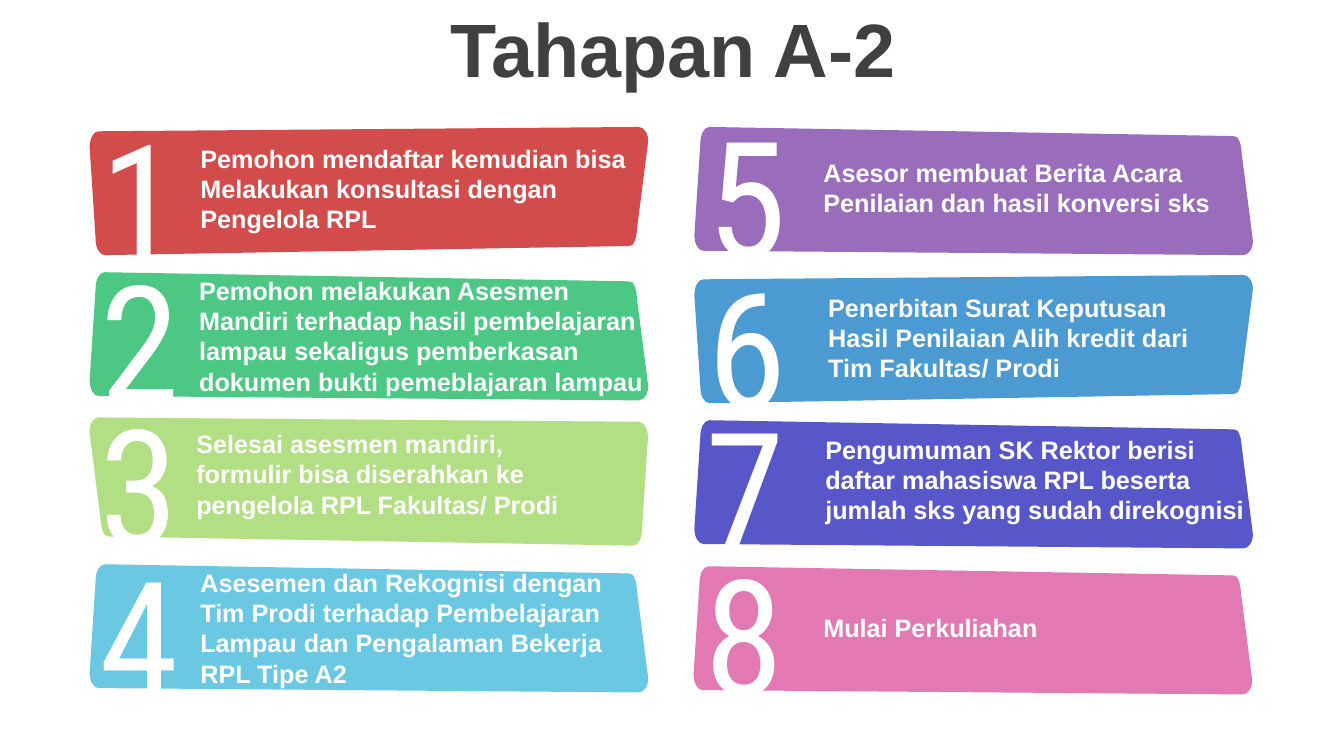
from dataclasses import dataclass

from lxml import etree
from pptx import Presentation
from pptx.dml.color import RGBColor
from pptx.enum.text import MSO_ANCHOR, MSO_AUTO_SIZE, PP_ALIGN
from pptx.oxml.ns import qn
from pptx.util import Cm, Pt

CENTER = PP_ALIGN.CENTER
TOP, MIDDLE = MSO_ANCHOR.TOP, MSO_ANCHOR.MIDDLE
FIT_SHAPE, NO_FIT = MSO_AUTO_SIZE.SHAPE_TO_FIT_TEXT, MSO_AUTO_SIZE.NONE

WHITE = RGBColor(0xFF, 0xFF, 0xFF)
GREY = RGBColor(0x40, 0x40, 0x40)
RED = RGBColor(0xC0, 0x00, 0x00)
GREEN = RGBColor(0x00, 0xB0, 0x50)
LIME = RGBColor(0x92, 0xD0, 0x50)
CYAN = RGBColor(0x2C, 0xB2, 0xD7)
PURPLE = RGBColor(0x70, 0x30, 0xA0)
BLUE = RGBColor(0x00, 0x70, 0xC0)
INDIGO = RGBColor(0x10, 0x10, 0xB3)
PINK = RGBColor(0xD7, 0x41, 0x92)

TITLE_FONT = {"name": "Arial", "size": Pt(54), "bold": True}
STEP_FONT = {"name": "Arial", "size": Pt(18), "bold": True}
DIGIT_FONT = {"name": "Roboto Condensed", "size": Pt(115), "bold": False}

# All lengths below are in centimetres.
LEFT_COLUMN, RIGHT_COLUMN = 2.26, 17.5
BAND_WIDTH, BAND_HEIGHT = 14.07, 3.23
DIGIT_WIDTH, DIGIT_HEIGHT = 2.51, 5.18
LINE_HEIGHT, TEXT_PADDING = 0.77, 0.25
OPACITY = 70

# Each rounded corner is a cubic curve: start, two controls, end.
BAND_CORNERS = (
    ((0.38, 0), (0.25, 0), (0.15, 0.18), (0.15, 0.41)),
    ((0, 2.72), (0, 2.95), (0.1, 3.12), (0.23, 3.12)),
    ((13.84, 3.23), (13.97, 3.23), (14.1, 3.05), (14.07, 2.82)),
    ((13.79, 0.64), (13.79, 0.48), (13.72, 0.2), (13.59, 0.23)),
)


@dataclass
class Step:
    """One band; digit and text offsets are measured from its top left."""
    number: str
    left: float
    top: float
    color: RGBColor
    flip_x: bool
    flip_y: bool
    digit: tuple
    text_box: tuple  # left, top, width, number of lines
    text: str


STEPS = (
    Step("1", LEFT_COLUMN, 3.2, RED, False, True, (0.03, -0.81), (2.54, 0.28, 11.33, 3),
         "Pemohon mendaftar kemudian bisa Melakukan konsultasi dengan Pengelola RPL"),
    Step("2", LEFT_COLUMN, 6.86, GREEN, False, False, (0.03, -0.92), (2.51, -0.05, 11.94, 4),
         "Pemohon melakukan Asesmen Mandiri terhadap hasil pembelajaran lampau "
         "sekaligus pemberkasan dokumen bukti pemeblajaran lampau"),
    Step("3", LEFT_COLUMN, 10.52, LIME, True, True, (0, -0.95), (2.44, 0.15, 10.54, 3),
         "Selesai asesmen mandiri, formulir bisa diserahkan ke pengelola RPL Fakultas/ Prodi"),
    Step("4", LEFT_COLUMN, 14.22, CYAN, False, False, (0, -0.83), (2.54, -0.05, 11.89, 4),
         "Asesemen dan Rekognisi dengan Tim Prodi terhadap Pembelajaran Lampau "
         "dan Pengalaman Bekerja RPL Tipe A2"),
    Step("5", RIGHT_COLUMN, 3.2, PURPLE, False, False, (0.08, -0.89), (3, 0.64, 11.1, 2),
         "Asesor membuat Berita Acara Penilaian dan hasil konversi sks"),
    Step("6", RIGHT_COLUMN, 6.93, BLUE, False, True, (0.08, -0.83), (3.12, 0.3, 10.64, 3),
         "Penerbitan Surat Keputusan Hasil Penilaian Alih kredit dari Tim Fakultas/ Prodi"),
    Step("7", RIGHT_COLUMN, 10.59, INDIGO, False, False, (0.03, -0.94), (3.05, 0.23, 11.61, 3),
         "Pengumuman SK Rektor berisi daftar mahasiswa RPL beserta jumlah sks "
         "yang sudah direkognisi"),
    Step("8", RIGHT_COLUMN - 0.02, 14.27, PINK, False, False, (0.02, -0.93), (3.02, 1.04, 11.61, 1),
         "Mulai Perkuliahan"),
)


def set_format(target, values):
    for name, value in values.items():
        setattr(target, name, value)


def write_text(box, text, font, color, frame_format):
    frame = box.text_frame
    set_format(frame, frame_format)
    para = frame.paragraphs[0]
    span = para.add_run()
    span.text = text
    set_format(span.font, font)
    span.font.color.rgb = color
    return para


def add_title(page, left, top, width, height):
    box = page.shapes.title
    set_format(box, {"left": Cm(left), "top": Cm(top),
                     "width": Cm(width), "height": Cm(height)})
    para = write_text(box, "Tahapan A-2", TITLE_FONT, GREY,
                      {"vertical_anchor": MIDDLE, "word_wrap": True, "auto_size": NO_FIT})
    set_format(para, {"alignment": CENTER, "line_spacing": 0.9, "space_before": Pt(10)})


def round_corners(band, corners):
    """Turn the straight cut across each corner into its cubic curve."""
    cuts = list(band._element.iter(qn("a:lnTo")))[::2]
    for cut, (_, *controls, _) in zip(cuts, corners):
        cut.tag = qn("a:cubicBezTo")
        for index, (x, y) in enumerate(controls):
            point = etree.Element(qn("a:pt"), x=str(Cm(x)), y=str(Cm(y)))
            cut.insert(index, point)


def add_band(page, step):
    corners = [[(BAND_WIDTH - x if step.flip_x else x,
                 BAND_HEIGHT - y if step.flip_y else y) for x, y in corner]
               for corner in BAND_CORNERS]
    ends = [(Cm(x), Cm(y)) for corner in corners for x, y in (corner[0], corner[-1])]
    builder = page.shapes.build_freeform(*ends[0])
    builder.add_line_segments(ends[1:], close=True)
    band = builder.convert_to_shape(Cm(step.left), Cm(step.top))
    round_corners(band, corners)
    band.shadow.inherit = False
    band.line.fill.background()
    band.fill.solid()
    band.fill.fore_color.rgb = step.color
    fill_color = band._element.spPr.find(qn("a:solidFill")).find(qn("a:srgbClr"))
    etree.SubElement(fill_color, qn("a:alpha")).set("val", str(OPACITY * 1000))


def add_label(page, left, top, width, height, text, font, wrap):
    box = page.shapes.add_textbox(Cm(left), Cm(top), Cm(width), Cm(height))
    write_text(box, text, font, WHITE,
               {"vertical_anchor": TOP, "word_wrap": wrap, "auto_size": FIT_SHAPE})


def add_step_labels(page, step):
    digit_left, digit_top = step.digit
    digit_width = 2.06 if step.number == "1" else DIGIT_WIDTH
    add_label(page, step.left + digit_left, step.top + digit_top,
              digit_width, DIGIT_HEIGHT, step.number, DIGIT_FONT, False)
    text_left, text_top, text_width, lines = step.text_box
    add_label(page, step.left + text_left, step.top + text_top, text_width,
              TEXT_PADDING + lines * LINE_HEIGHT, step.text, STEP_FONT, True)


def main():
    deck = Presentation()
    deck.slide_width, deck.slide_height = Cm(33.87), Cm(19.05)
    page = deck.slides.add_slide(deck.slide_layouts[5])
    add_title(page, 0.89, 0.33, 32.16, 2.01)
    for step in STEPS:
        add_band(page, step)
    for step in STEPS:
        add_step_labels(page, step)
    deck.save("out.pptx")


if __name__ == "__main__":
    main()
